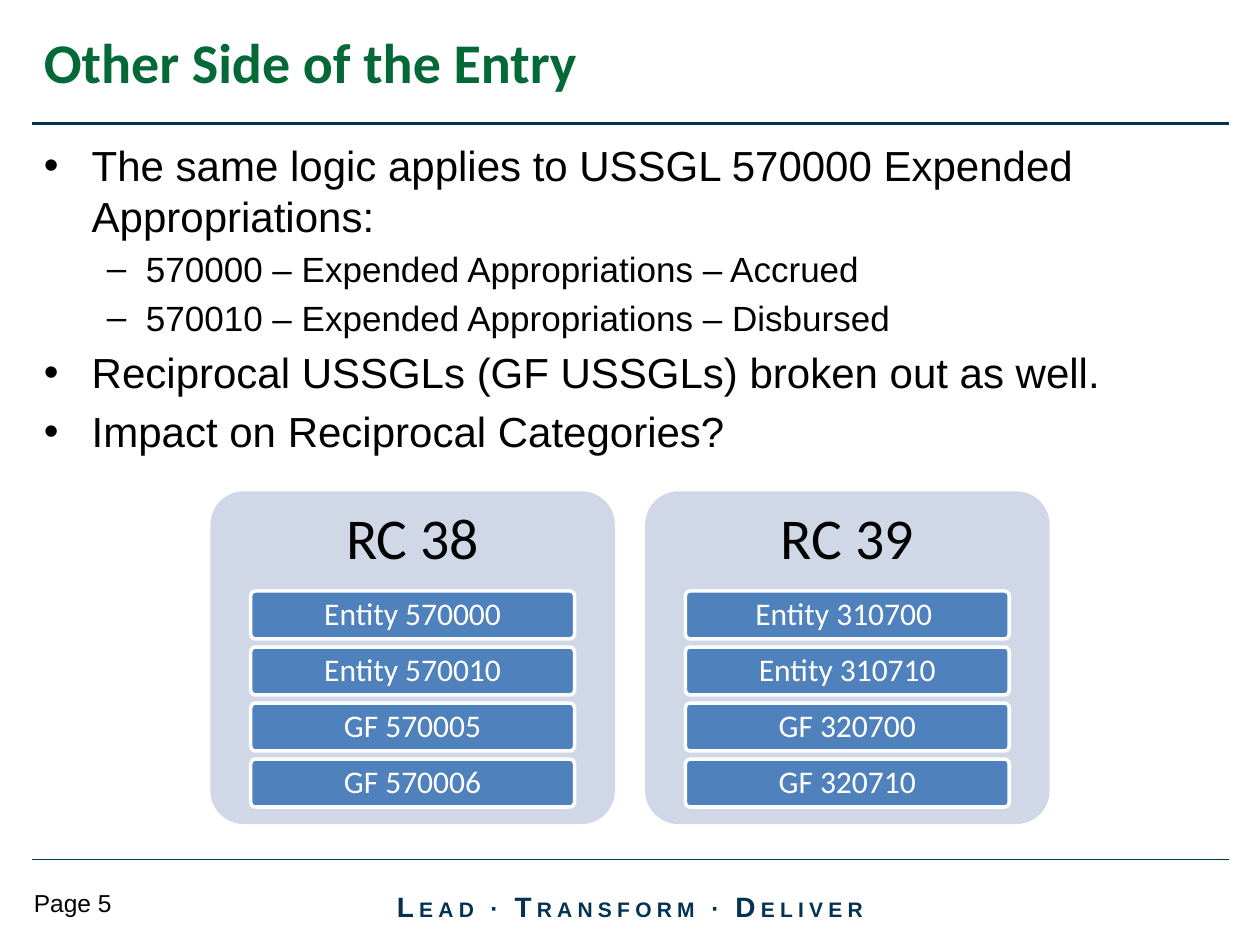
from dataclasses import dataclass
from lxml.etree import SubElement
from pptx import Presentation
from pptx.dml.color import RGBColor as Rgb
from pptx.enum.shapes import MSO_CONNECTOR as Link, MSO_SHAPE as Form
from pptx.enum.text import MSO_ANCHOR as Anchor, PP_ALIGN as Align
from pptx.oxml.ns import qn
from pptx.util import Inches, Pt


@dataclass(frozen=True)
class Theme:
    navy: str = "043253"
    green: str = "036A37"
    black: str = "000000"
    white: str = "FFFFFF"
    panel: str = "D0D8E8"
    tile: str = "4F81BD"
    sans: str = "Arial"
    head: str = "Calibri"
    title: int = 32
    group: int = 33
    entry: int = 18
    levels: tuple = (24, 20)
    page: int = 14
    motto: tuple = (16, 12, 14)


class Deck:
    unit = 0.25

    def __init__(self, theme):
        self.theme = theme
        self.prs = Presentation()
        self.prs.slide_width, self.prs.slide_height = Inches(10), Inches(7.5)
        self.slide = self.prs.slides.add_slide(self.prs.slide_layouts[6])

    def grid(self, *cells):
        return [Inches(cell * self.unit) for cell in cells]

    def line(self, row, width):
        left, top, right = self.grid(1, row, 39)
        rule = self.slide.shapes.add_connector(Link.STRAIGHT, left, top, right, top)
        rule.line.color.rgb = Rgb.from_string(self.theme.navy)
        rule.line.width = Pt(width)
        SubElement(rule._element.spPr, qn("a:effectLst"))

    def run(self, para, text, size, color, face, bold=False):
        run = para.add_run()
        run.text = text
        for name, value in {"size": Pt(size), "name": face, "bold": bold}.items():
            setattr(run.font, name, value)
        run.font.color.rgb = Rgb.from_string(color)
        return run

    def frame(self, shape, anchor=Anchor.TOP, inset=(0.1, 0.05)):
        side, edge = map(Inches, inset)
        frame = shape.text_frame
        form = {"word_wrap": True, "vertical_anchor": anchor,
                "margin_left": side, "margin_right": side,
                "margin_top": edge, "margin_bottom": edge}
        for name, value in form.items():
            setattr(frame, name, value)
        return frame

    def box(self, place, **form):
        return self.frame(self.slide.shapes.add_textbox(*self.grid(*place)), **form)

    def text(self, place, text, *style):
        self.run(self.box(place).paragraphs[0], text, *style)

    def label(self, frame, text, size, color):
        para = frame.paragraphs[0]
        para.alignment, para.line_spacing = Align.CENTER, 0.9
        self.run(para, text, size, color, self.theme.head)

    def bullets(self, place, items):
        frame = self.box(place)
        marks = (("•", 0.38, 0.38), ("–", 0.81, 0.31))
        for index, (level, text) in enumerate(items):
            para = frame.add_paragraph() if index else frame.paragraphs[0]
            mark, left, hang = marks[level]
            size = self.theme.levels[level]
            para.level = level
            props = para._p.get_or_add_pPr()
            props.set("marL", str(Inches(left)))
            props.set("indent", str(-Inches(hang)))
            SubElement(props, qn("a:buFont")).set("typeface", self.theme.sans)
            SubElement(props, qn("a:buChar")).set("char", mark)
            para.space_before = Pt(size * 0.2 if index else 0)
            self.run(para, text, size, self.theme.black, self.theme.sans)

    def motto(self, place, words):
        large, small, dot = self.theme.motto
        para = self.box(place, anchor=Anchor.MIDDLE).paragraphs[0]
        para.alignment = Align.CENTER
        parts = []
        for index, word in enumerate(words):
            if index:
                parts += [(" ", small), ("∙ ", dot)]
            parts += [(word[0], large), (word[1:], small)]
        for text, size in parts:
            run = self.run(para, text, size, self.theme.navy, self.theme.sans, True)
            run.font._element.set("spc", "300")

    def card(self, place, fill, edge=None):
        card = self.slide.shapes.add_shape(Form.ROUNDED_RECTANGLE, *self.grid(*place))
        card.adjustments[0] = 0.1
        card.shadow.inherit = False
        card.fill.solid()
        card.fill.fore_color.rgb = Rgb.from_string(fill)
        if edge:
            card.line.color.rgb = Rgb.from_string(edge)
            card.line.width = Pt(2)
        else:
            card.line.fill.background()
        return card

    def group(self, left, top, name, entries):
        look = self.theme
        wide, tall, inset, head, pitch = 12.84, 10.56, 1.28, 3.16, 1.78
        self.card((left, top, wide, tall), look.panel)
        title = self.box((left, top, wide, head), anchor=Anchor.MIDDLE, inset=(0.14, 0.14))
        self.label(title, name, look.group, look.black)
        for index, entry in enumerate(entries):
            place = (left + inset, top + head + index * pitch, wide - 2 * inset, 1.52)
            tile = self.card(place, look.tile, look.white)
            frame = self.frame(tile, Anchor.MIDDLE, (0.05, 0.04))
            self.label(frame, entry, look.entry, look.white)


def main():
    look = Theme()
    deck = Deck(look)
    deck.line(27.28, 0.75)
    deck.motto((11.32, 27.96, 17.36, 1.6), ("LEAD", "TRANSFORM", "DELIVER"))
    deck.line(3.92, 2.25)
    deck.text((0.68, 28, 5, 1.32), "Page 5", look.page, look.black, look.sans)
    deck.bullets((1, 4.24, 38, 22.76), (
        (0, "The same logic applies to USSGL 570000 Expended Appropriations:"),
        (1, "570000 – Expended Appropriations – Accrued"),
        (1, "570010 – Expended Appropriations – Disbursed"),
        (0, "Reciprocal USSGLs (GF USSGLs) broken out as well."),
        (0, "Impact on Reciprocal Categories?"),
    ))
    deck.text((1, 0.68, 38, 3), "Other Side of the Entry",
              look.title, look.green, look.head, True)
    groups = {
        "RC 38": ("Entity 570000", "Entity 570010", "GF 570005", "GF 570006"),
        "RC 39": ("Entity 310700 ", "Entity 310710", "GF 320700", "GF 320710"),
    }
    for index, (name, entries) in enumerate(groups.items()):
        deck.group(6.68 + index * 13.8, 15.6, name, entries)
    deck.prs.save("out.pptx")


if __name__ == "__main__":
    main()
